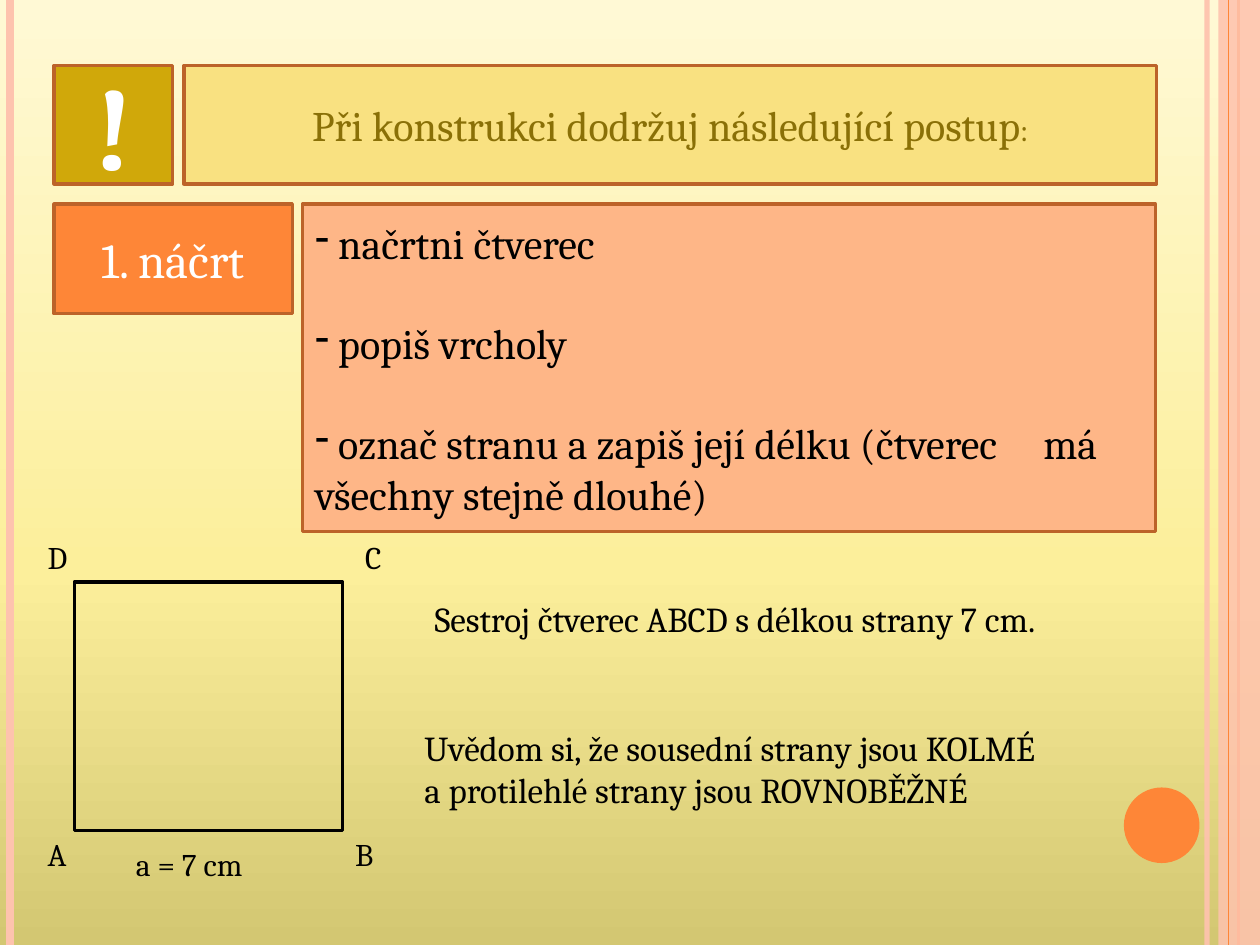
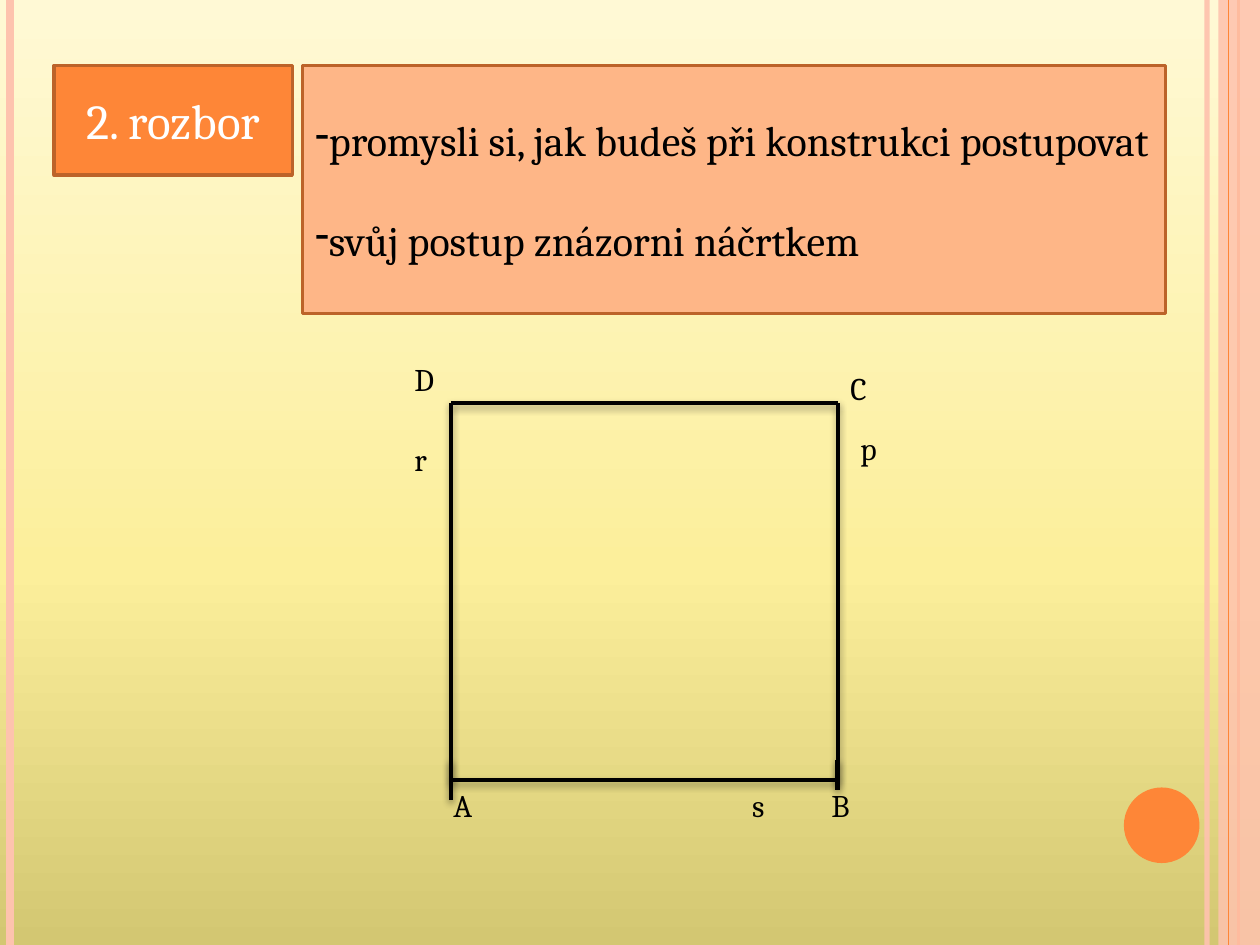
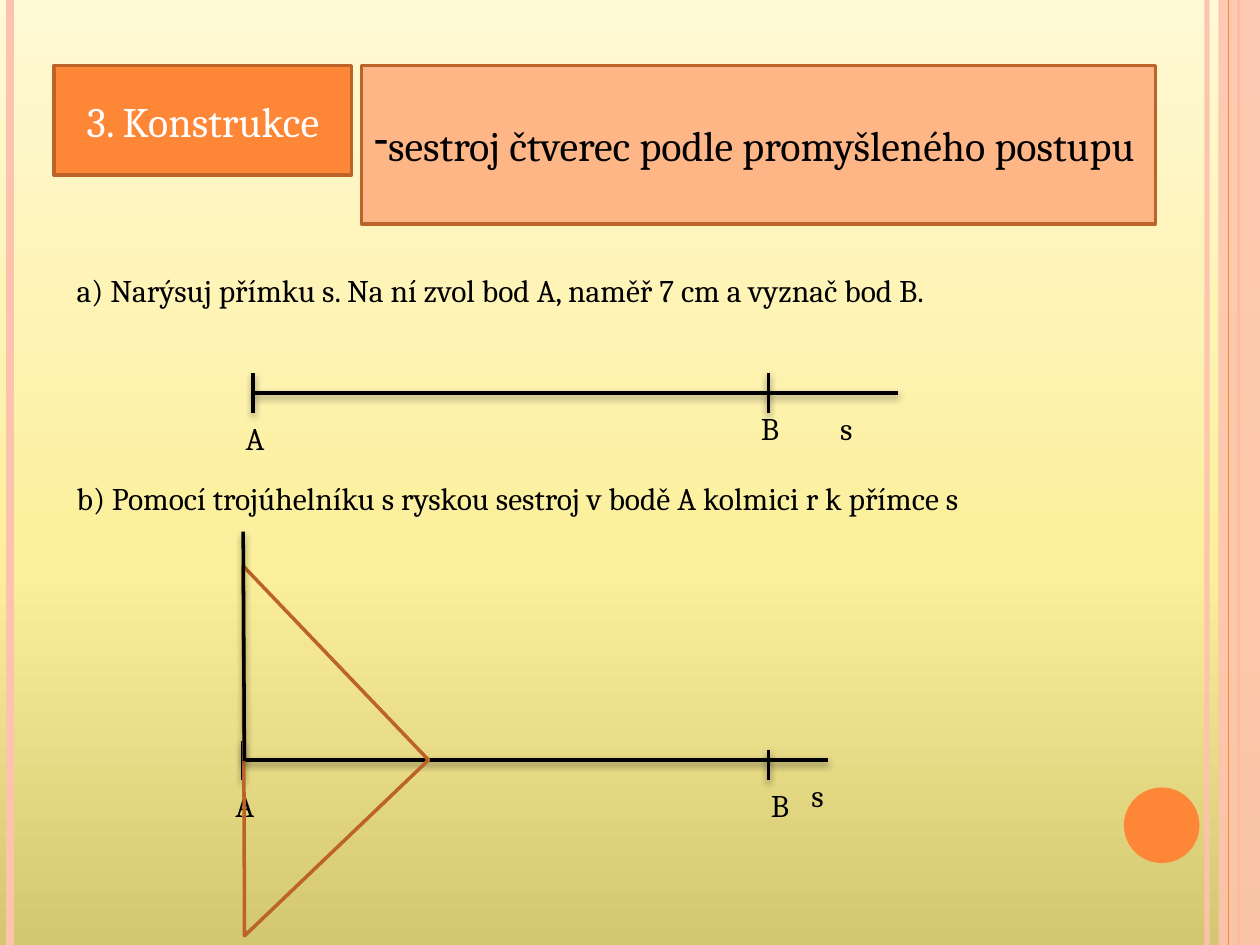
import copy

import lxml.etree
import pptx
import pptx.dml.color
import pptx.enum.shapes
import pptx.enum.text
import pptx.oxml
import pptx.oxml.ns
import pptx.util

COLORS = {
    "peach": "FEC3AE", "orange": "FE8637", "brown": "BC6329", "pale orange": "FEB687",
    "gold": "D0A80A", "pale gold": "F9E181", "olive": "8A7007",
    "black": "000000", "white": "FFFFFF",
}
BACKGROUND_STOPS = [(0, "D3C772"), (0.4, "FCEF9B"), (1, "FFF9D5")]
FONT = "Cambria"
WIDTH, HEIGHT = 10, 7.5
MARGIN, TOP, GAP = 0.43, 0.52, 0.08
STEP_HEIGHT = 0.87
LABEL_WIDTH, LABEL_HEIGHT = 0.55, 0.4
BLANK_LINE = 28.5
SHADOW = (
    '<a:effectLst {}><a:outerShdw blurRad="50800" dist="25400" dir="5400000" rotWithShape="0">'
    '<a:srgbClr val="000000"><a:alpha val="40000"/></a:srgbClr></a:outerShdw></a:effectLst>'
)

# x, colour, width in points, opacity in percent
STRIPES = [(9.58, "peach", 3, 93), (0.08, "peach", 4.5, 100),
           (9.83, "orange", 1.5, 100), (9.75, "orange", 0.75, 100)]

# Corners of the square in the analysis, and the axes of the construction
LEFT, RIGHT, UPPER, LOWER = 3.58, 6.65, 3.2, 6.19
POINT_B, LINE_A, LINE_B = 6.1, 3.12, 6.03

# Labels are (text, x, y); sentences add size and width; lines are (x1, y1, x2, y2, width)
SLIDES = [
    {
        "step": "1. náčrt", "step size": 28, "step width": 1.89, "top": 1.62,
        "tasks": [" načrtni čtverec", " popiš vrcholy",
                  " označ stranu a zapiš její délku (čtverec\tmá všechny stejně dlouhé)"],
        "tasks width": 6.77, "tasks height": 2.6,
        "labels": [("A", 0.28, 6.58), ("B", 2.72, 6.58), ("C", 2.8, 4.22), ("D", 0.28, 4.22)],
        "sentences": [
            ("a = 7 cm", 0.98, 6.66, 18, 1.5),
            ("Uvědom si, že sousední strany jsou KOLMÉ\na protilehlé strany jsou ROVNOBĚŽNÉ",
             3.27, 5.72, 20, 5.98),
            ("Sestroj čtverec ABCD s délkou strany 7 cm.", 3.35, 4.69, 20, 5.91),
        ],
        "lines": [],
    },
    {
        "step": "2. rozbor", "step size": 28, "step width": 1.89, "top": TOP,
        "tasks": ["promysli si, jak budeš při konstrukci postupovat",
                  "svůj postup znázorni náčrtkem"],
        "tasks width": 6.85, "tasks height": 1.97,
        "labels": [("A", 3.5, LOWER), ("B", 6.5, LOWER), ("C", RIGHT, 2.88), ("D", 3.19, 2.81),
                   ("p", 6.73, 3.36), ("r", 3.19, 3.44), ("s", 5.87, LOWER)],
        "sentences": [],
        "lines": [
            (LEFT, LOWER, RIGHT, LOWER, 2), (LEFT, LOWER, LEFT, UPPER, 2),
            (LEFT, UPPER, RIGHT, UPPER, 2), (RIGHT, LOWER, RIGHT, UPPER, 2),
            (LEFT, 6.03, LEFT, 6.35, 2.75), (RIGHT, 6.03, RIGHT, 6.27, 2.75),
        ],
    },
    {
        "step": "3. Konstrukce", "step size": 24, "step width": 2.36, "top": TOP,
        "tasks": ["sestroj čtverec podle promyšleného postupu"],
        "tasks width": 6.3, "tasks height": 1.26,
        "labels": [("A", 1.85, 3.28), ("B", 5.94, 3.2), ("s", 6.57, 3.2),
                   ("A", 1.77, 6.19), ("B", 6.02, 6.19), ("s", 6.34, 6.11)],
        "sentences": [
            ("a) Narýsuj přímku s. Na ní zvol bod A, naměř 7 cm a vyznač bod B.",
             0.51, 2.1, 18, 8.82),
            ("b) Pomocí trojúhelníku s ryskou sestroj v bodě A kolmici r k přímce s",
             0.51, 3.75, 18, 8.98),
        ],
        "lines": [
            (2.01, LINE_A, 7.13, LINE_A, 2), (2.01, 2.96, 2.01, 3.28, 2),
            (POINT_B, 2.96, POINT_B, 3.28, 2),
            (1.93, LINE_B, 6.57, LINE_B, 2), (1.93, 5.88, 1.93, 6.19, 2),
            (POINT_B, 5.95, POINT_B, 6.19, 2),
        ],
    },
]


def rgb(name):
    return pptx.dml.color.RGBColor.from_string(COLORS.get(name, name))


def inches(*lengths):
    return [pptx.util.Inches(length) for length in lengths]


def set_opacity(element, percent):
    color = element.find(".//" + pptx.oxml.ns.qn("a:srgbClr"))
    lxml.etree.SubElement(color, pptx.oxml.ns.qn("a:alpha"), val=str(percent * 1000))


def paint(shape, fill, line="brown"):
    if fill:
        shape.fill.solid()
        shape.fill.fore_color.rgb = rgb(fill)
    else:
        shape.fill.background()
    if line:
        shape.line.color.rgb = rgb(line)
        shape.line.width = pptx.util.Pt(2)
    else:
        shape.line.fill.background()
    shape.shadow.inherit = False


def add_box(slide, position, fill, line="brown", kind="RECTANGLE"):
    preset = getattr(pptx.enum.shapes.MSO_SHAPE, kind)
    shape = slide.shapes.add_shape(preset, *inches(*position))
    paint(shape, fill, line)
    return shape


def add_line(slide, x1, y1, x2, y2, width, color="black", shadow=True):
    connector = slide.shapes.add_connector(
        pptx.enum.shapes.MSO_CONNECTOR.STRAIGHT, *inches(x1, y1, x2, y2))
    connector.line.color.rgb = rgb(color)
    connector.line.width = pptx.util.Pt(width)
    effects = SHADOW if shadow else "<a:effectLst {}/>"
    properties = connector.element.find(pptx.oxml.ns.qn("p:spPr"))
    properties.append(pptx.oxml.parse_xml(effects.format(pptx.oxml.ns.nsdecls("a"))))
    return connector


def write(shape, text, size, color="black", align="LEFT", anchor="MIDDLE", bold=False):
    frame = shape.text_frame
    frame.text = text
    frame.word_wrap = True
    frame.auto_size = pptx.enum.text.MSO_AUTO_SIZE.NONE
    frame.vertical_anchor = getattr(pptx.enum.text.MSO_ANCHOR, anchor)
    for paragraph in frame.paragraphs:
        paragraph.alignment = getattr(pptx.enum.text.PP_ALIGN, align)
        for run in paragraph.runs:
            run.font.name = FONT
            run.font.size = pptx.util.Pt(size)
            run.font.bold = bold
            run.font.color.rgb = rgb(color)


def add_text(slide, text, x, y, size=18, width=LABEL_WIDTH):
    height = LABEL_HEIGHT * len(text.split("\n"))
    write(slide.shapes.add_textbox(*inches(x, y, width, height)), text, size, anchor="TOP")


def add_dashes(frame):
    """Give each paragraph a dash, and all but the first a blank line above."""
    for index, paragraph in enumerate(frame.paragraphs):
        paragraph.space_before = pptx.util.Pt(BLANK_LINE if index else 0)
        properties = paragraph._p.get_or_add_pPr()
        properties.set("marL", "0")
        properties.set("indent", "0")
        lxml.etree.SubElement(properties, pptx.oxml.ns.qn("a:buFontTx"))
        lxml.etree.SubElement(properties, pptx.oxml.ns.qn("a:buChar"), char="-")
        if "\t" in paragraph.text:
            tabs = lxml.etree.SubElement(properties, pptx.oxml.ns.qn("a:tabLst"))
            lxml.etree.SubElement(tabs, pptx.oxml.ns.qn("a:tab"),
                                  pos=str(pptx.util.Inches(5.78)), algn="l")


def decorate_master(master, slide):
    """Set the background, and draw the side stripes and the disc behind every slide."""
    fill = master.background.fill
    fill.gradient()
    fill.gradient_angle = 90
    stop_list = master.element.find(".//" + pptx.oxml.ns.qn("a:gsLst"))
    stop_list.insert(1, copy.deepcopy(stop_list[0]))
    for stop, (position, color) in zip(fill.gradient_stops, BACKGROUND_STOPS):
        stop.position = position
        stop.color.rgb = rgb(color)

    parts = []
    for x, color, width, opacity in STRIPES:
        stripe = add_line(slide, x, 0, x, HEIGHT, width, color, shadow=False)
        if opacity < 100:
            set_opacity(stripe.element, opacity)
        parts.append(stripe)
    band = add_box(slide, (9.67, 0, WIDTH - 9.67, HEIGHT), "peach", None)
    set_opacity(band.element, 87)
    parts.insert(3, band)
    parts.append(add_box(slide, (8.92, 6.25, 0.6, 0.6), "orange", None, "OVAL"))
    for part in parts:
        master.shapes.element.append(part.element)


def place(placeholder, position):
    placeholder.left, placeholder.top, placeholder.width, placeholder.height = inches(*position)


def add_step(presentation, content):
    slide = presentation.slides.add_slide(presentation.slide_layouts[1])
    title, body = slide.shapes.title, slide.placeholders[1]
    top, step_width = content["top"], content["step width"]

    place(title, (MARGIN, top, step_width, STEP_HEIGHT))
    paint(title, "orange")
    write(title, content["step"], content["step size"], "white", "CENTER")

    place(body, (MARGIN + step_width + GAP, top,
                 content["tasks width"], content["tasks height"]))
    paint(body, "pale orange")
    write(body, "\n".join(content["tasks"]), 24)
    add_dashes(body.text_frame)

    for text in content["labels"] + content["sentences"]:
        add_text(slide, *text)
    for line in content["lines"]:
        add_line(slide, *line)
    return slide


def add_banner(slide):
    side = 0.94
    mark = add_box(slide, (MARGIN, TOP, side, side), "gold")
    write(mark, "!", 66, "white", "CENTER", bold=True)
    banner = add_box(slide, (1.46, TOP, 7.72, side), "pale gold")
    write(banner, "Při konstrukci dodržuj následující postup", 24, "olive", "CENTER")
    colon = banner.text_frame.paragraphs[0].add_run()
    colon.text = ":"
    colon.font.name = FONT
    colon.font.size = pptx.util.Pt(18)
    colon.font.color.rgb = rgb("olive")


def main():
    presentation = pptx.Presentation()
    presentation.slide_width, presentation.slide_height = inches(WIDTH, HEIGHT)
    sketch, analysis, construction = [add_step(presentation, content) for content in SLIDES]
    decorate_master(presentation.slide_master, sketch)

    add_banner(sketch)
    add_box(sketch, (0.59, 4.62, 2.13, 1.97), None, "black")

    set_square = add_box(construction, (0.87, 4.95, 2.13, 2.02), None, kind="RIGHT_TRIANGLE")
    set_square.rotation = 226.3
    add_line(construction, 1.94, 6.04, 1.93, 4.22, 2)

    presentation.save("out.pptx")


if __name__ == "__main__":
    main()
